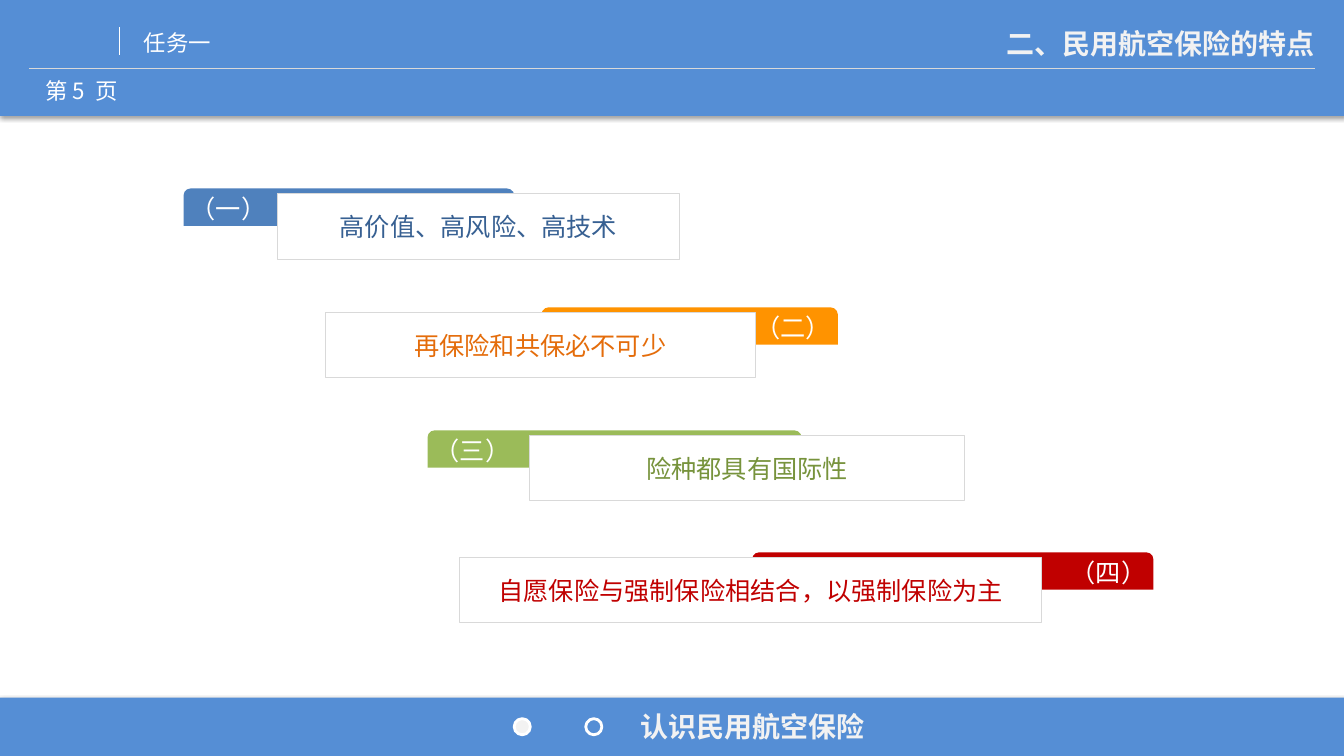
from dataclasses import dataclass

from lxml import etree
from pptx import Presentation
from pptx.dml.color import RGBColor
from pptx.enum.shapes import MSO_CONNECTOR, MSO_SHAPE
from pptx.enum.text import MSO_ANCHOR, PP_ALIGN
from pptx.oxml.ns import qn
from pptx.util import Pt

RECT, OVAL = MSO_SHAPE.RECTANGLE, MSO_SHAPE.OVAL
TAB = MSO_SHAPE.ROUND_2_SAME_RECTANGLE
LINE = MSO_CONNECTOR.STRAIGHT
LEFT, MID, RIGHT = PP_ALIGN.LEFT, PP_ALIGN.CENTER, PP_ALIGN.RIGHT
MIDDLE = MSO_ANCHOR.MIDDLE
PX = 9144


@dataclass(frozen=True)
class Theme:
    font: str = "Noto Sans CJK SC"
    band: str = "558ED5"
    white: str = "FFFFFF"
    pale: str = "F2F2F2"
    rule: str = "D9D9D9"
    shade: str = "000000"
    head: int = 20
    body: int = 18
    small: int = 16
    thin: float = 0.75
    ring: int = 2


THEME = Theme()
CARDS = [
    ("（一）", "高价值、高风险、高技术", "4F81BD", "376092", (182, 187, 328), (275, 399)),
    ("（三）", "险种都具有国际性", "9BBB59", "77933C", (424, 427, 371), (525, 432)),
    ("（二）", "再保险和共保必不可少", "FF9300", "E46C0A", (537, 305, 294), (323, 426)),
    ("（四）", "自愿保险与强制保险相结合，以强制保险为主", "C00000", "C00000", (746, 548, 398), (456, 577)),
]


def px(*vals):
    return [val * PX for val in vals]


def write(shape, text, size, color, align=LEFT, bold=False, pad=(10, 5, 10, 5)):
    frame = shape.text_frame
    left, top, right, low = px(*pad)
    form = {"word_wrap": True, "vertical_anchor": MIDDLE, "margin_left": left,
            "margin_top": top, "margin_right": right, "margin_bottom": low}
    for name, val in form.items():
        setattr(frame, name, val)
    para = frame.paragraphs[0]
    para.alignment = align
    run = para.add_run()
    run.text = text
    for name, val in {"size": Pt(size), "bold": bold, "name": THEME.font}.items():
        setattr(run.font, name, val)
    run.font.color.rgb = RGBColor.from_string(color)
    props = run.font.element if hasattr(run.font, "element") else run._r.get_or_add_rPr()
    etree.SubElement(props, qn("a:ea"), typeface=THEME.font)


def draw(slide, kind, box, fill=None, line=None, width=THEME.thin):
    shape = slide.shapes.add_shape(kind, *px(*box))
    shape.shadow.inherit = False
    if fill:
        shape.fill.solid()
        shape.fill.fore_color.rgb = RGBColor.from_string(fill)
    else:
        shape.fill.background()
    if line:
        shape.line.color.rgb = RGBColor.from_string(line)
        shape.line.width = Pt(width)
    else:
        shape.line.fill.background()
    return shape


def label(slide, box, text, size, color, **form):
    write(slide.shapes.add_textbox(*px(*box)), text, size, color, **form)


def rule(slide, ends, color):
    line = slide.shapes.add_connector(LINE, *px(*ends))
    line.line.color.rgb = RGBColor.from_string(color)
    line.line.width = Pt(THEME.thin)
    etree.SubElement(line.element.spPr, qn("a:effectLst"))


def band(slide, box):
    shape = draw(slide, RECT, box, THEME.band)
    glow = shape.element.spPr.find(qn("a:effectLst"))
    cast = etree.SubElement(glow, qn("a:outerShdw"), blurRad=str(Pt(3.1)),
                            dist=str(Pt(1.8)), dir="5400000", rotWithShape="0")
    tone = etree.SubElement(cast, qn("a:srgbClr"), val=THEME.shade)
    etree.SubElement(tone, qn("a:alpha"), val="35000")


def header(slide, box):
    left, top, width, high = box
    band(slide, box)
    rule(slide, (left + 29, top + 68, left + width - 29, top + 68), THEME.rule)
    rule(slide, (left + 119, top + 27, left + 119, top + 55), THEME.white)
    title = slide.shapes.title
    spot = px(left + width - 524, top + 21, 505, 44)
    for name, val in zip(("left", "top", "width", "height"), spot):
        setattr(title, name, val)
    write(title, "二、民用航空保险的特点", THEME.head, THEME.pale, align=RIGHT, bold=True)
    slide.shapes.element.append(title.element)
    label(slide, (left + 21, top + 70, 120, 40), "第 5  页", THEME.small, THEME.white, align=MID)
    label(slide, (left + 133, top + 24, 326, 37), "任务一", THEME.small, THEME.white)


def footer(slide, box):
    left, top, width, high = box
    band(slide, box)
    for step, fill in enumerate((THEME.pale, None)):
        dot = (left + 510 + 71 * step, top + 21, 16, 16)
        draw(slide, OVAL, dot, fill, THEME.white, THEME.ring)
    label(slide, (left + 625, top + 7, 394, 44), "认识民用航空保险",
          THEME.head, THEME.pale, bold=True)


def card(slide, mark, text, fill, ink, tab, body):
    left, top, width = tab
    start, span = body
    flag = draw(slide, TAB, (left, top, width, 37), fill)
    flag.adjustments[0] = 0.19
    if left < start:
        write(flag, mark, THEME.body, THEME.white, pad=(5, 0, 12, 0))
    else:
        write(flag, mark, THEME.body, THEME.white, align=RIGHT, pad=(12, 0, 5, 0))
    panel = draw(slide, RECT, (start, top + 5, span, 65), THEME.white, THEME.rule)
    write(panel, text, THEME.body, ink, align=MID, pad=(12, 6, 12, 6))


def main():
    deck = Presentation()
    deck.slide_width, deck.slide_height = px(1333, 750)
    slide = deck.slides.add_slide(deck.slide_layouts[5])
    header(slide, (0, 0, 1333, 115))
    footer(slide, (0, 692, 1333, 58))
    for item in CARDS:
        card(slide, *item)
    deck.save("out.pptx")


if __name__ == "__main__":
    main()
